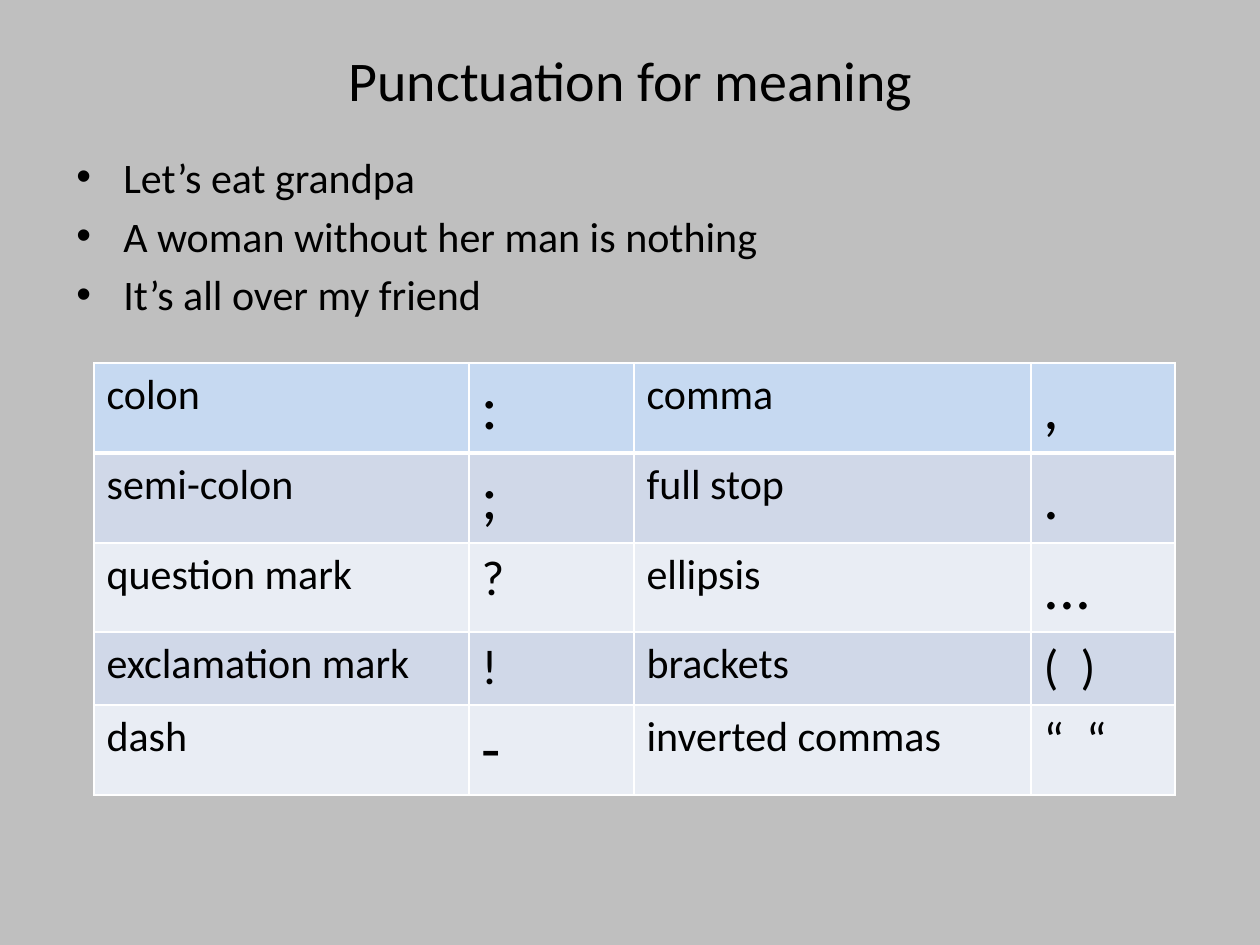
from lxml import etree
from pptx import Presentation
from pptx.dml.color import RGBColor
from pptx.enum.text import MSO_ANCHOR as Anchor, PP_ALIGN as Align
from pptx.oxml.ns import qn
from pptx.util import Pt

TITLE = "Punctuation for meaning"
SENTENCES = [
    "Let’s eat grandpa",
    "A woman without her man is nothing",
    "It’s all over my friend",
]
MARKS = [
    [("colon", 24), (":", 36), ("comma", 24), (",", 36)],
    [("semi-colon", 24), (";", 36), ("full stop", 24), (".", 36)],
    [("question mark", 24), ("?", 28), ("ellipsis", 24), ("...", 36)],
    [("exclamation mark", 24), ("!", 28), ("brackets", 24), ("(  )", 28)],
    [("dash", 24), ("-", 36), ("inverted commas", 24), ("“  “", 28)],
]
COLUMN_WIDTHS = [375, 165, 397, 144]
ROW_HEIGHTS = [90, 90, 89, 73, 90]
HEADER_FILL = "C6D9F1"
BAND_FILLS = ["E9EDF4", "D0D8E8"]
BULLET_INDENT = 47


def px(length):
    return round(length * 914400 / 126)


def color(value):
    return RGBColor.from_string(value)


def write(paragraph, text, size=24, align=Align.LEFT):
    paragraph.alignment = align
    run = paragraph.add_run()
    run.text = text
    run.font.size = Pt(size)
    run.font.name = "Calibri"
    run.font.color.rgb = color("000000")


def add_frame(slide, left, top, width, height, anchor=Anchor.TOP):
    frame = slide.shapes.add_textbox(*map(px, (left, top, width, height))).text_frame
    frame.word_wrap = True
    frame.vertical_anchor = anchor
    return frame


def add_bullet(paragraph):
    properties = paragraph._p.get_or_add_pPr()
    properties.set("marL", str(px(BULLET_INDENT)))
    properties.set("indent", str(-px(BULLET_INDENT)))
    spacing = etree.SubElement(properties, qn("a:spcBef"))
    etree.SubElement(spacing, qn("a:spcPct"), val="20000")
    etree.SubElement(properties, qn("a:buFont"), typeface="Arial")
    etree.SubElement(properties, qn("a:buChar"), char="•")


def set_borders(cell, bottom):
    properties = cell._tc.get_or_add_tcPr()
    widths = {"a:lnL": 1, "a:lnR": 1, "a:lnT": 1, "a:lnB": bottom}
    for position, (side, width) in enumerate(widths.items()):
        line = etree.Element(qn(side), w=str(Pt(width)))
        fill = etree.SubElement(line, qn("a:solidFill"))
        etree.SubElement(fill, qn("a:srgbClr"), val="FFFFFF")
        properties.insert(position, line)


def add_marks(slide):
    table = slide.shapes.add_table(
        len(MARKS), len(COLUMN_WIDTHS), px(94), px(363),
        px(sum(COLUMN_WIDTHS)), px(sum(ROW_HEIGHTS)),
    ).table
    for column, width in zip(table.columns, COLUMN_WIDTHS):
        column.width = px(width)
    for row, height in zip(table.rows, ROW_HEIGHTS):
        row.height = px(height)
    for r, marks in enumerate(MARKS):
        for c, (text, size) in enumerate(marks):
            cell = table.cell(r, c)
            write(cell.text_frame.paragraphs[0], text, size=size)
            cell.fill.solid()
            cell.fill.fore_color.rgb = color(BAND_FILLS[r % 2] if r else HEADER_FILL)
            set_borders(cell, bottom=1 if r else 3)
            if r == 1:
                cell._tc.tcPr.find(qn("a:lnT")).set("w", str(Pt(3)))


def main():
    deck = Presentation()
    deck.slide_width, deck.slide_height = px(1260), px(945)
    slide = deck.slides.add_slide(deck.slide_layouts[6])
    slide.background.fill.solid()
    slide.background.fill.fore_color.rgb = color("BFBFBF")

    title = add_frame(slide, 64, 0, 1134, 158, anchor=Anchor.MIDDLE)
    write(title.paragraphs[0], TITLE, size=32, align=Align.CENTER)

    sentences = add_frame(slide, 64, 145, 1134, 624)
    for i, text in enumerate(SENTENCES):
        paragraph = sentences.add_paragraph() if i else sentences.paragraphs[0]
        write(paragraph, text)
        add_bullet(paragraph)

    add_marks(slide)
    deck.save("out.pptx")


if __name__ == "__main__":
    main()
